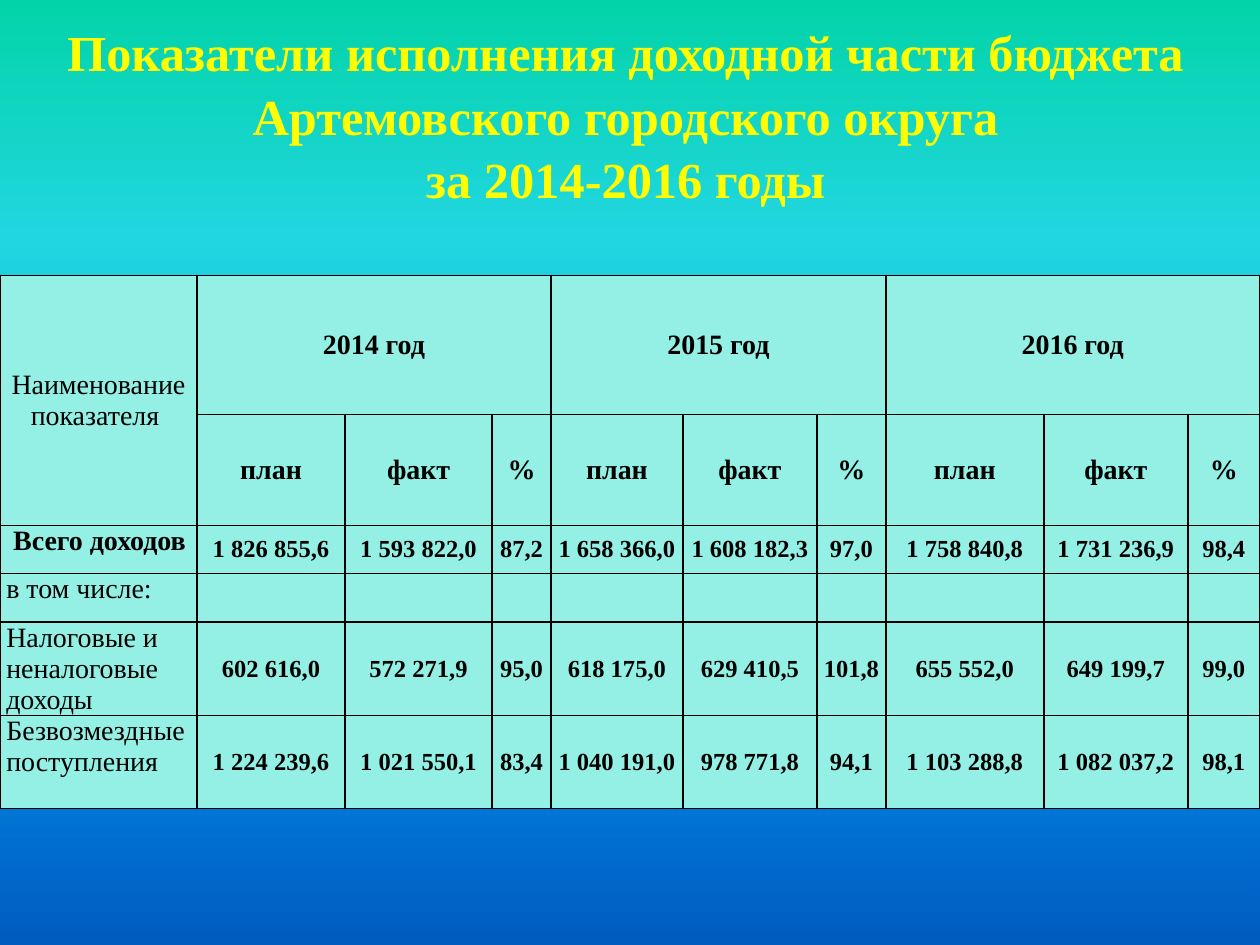
from lxml.etree import SubElement
from pptx import Presentation
from pptx.dml.color import RGBColor
from pptx.enum.text import MSO_ANCHOR, MSO_AUTO_SIZE, PP_ALIGN
from pptx.oxml.ns import qn
from pptx.util import Pt

YELLOW = RGBColor(0xFF, 0xFF, 0x00)
BLACK = RGBColor(0x00, 0x00, 0x00)
MINT = RGBColor(0x94, 0xF0, 0xE4)
BACKGROUND = [(0, RGBColor(0x03, 0xD4, 0xA8)), (25, RGBColor(0x21, 0xD6, 0xE0)),
              (75, RGBColor(0x00, 0x87, 0xE6)), (100, RGBColor(0x00, 0x5C, 0xBF))]
FONT = "Times New Roman"


def format_font(font, color, **values):
    for name, value in {"name": FONT, **values}.items():
        setattr(font, name, value)
    font.color.rgb = color


def add_borders(cell):
    tcPr = cell._tc.get_or_add_tcPr()
    for i, side in enumerate(("a:lnL", "a:lnR", "a:lnT", "a:lnB")):
        ln = SubElement(tcPr, qn(side), w=str(Pt(1)))
        fill = SubElement(ln, qn("a:solidFill"))
        SubElement(fill, qn("a:srgbClr"), val=str(BLACK))
        tcPr.insert(i, ln)  # borders come before the cell fill


prs = Presentation()
prs.slide_width, prs.slide_height = Pt(720), Pt(540)
s = prs.slides.add_slide(prs.slide_layouts[5])

# Background gradient, top to bottom
fill = s.background.fill
fill.gradient()
fill.gradient_angle = 270
stops = fill._fill._gradFill.find(qn("a:gsLst"))
for stop in list(stops):
    stops.remove(stop)
for position, color in BACKGROUND:
    stop = SubElement(stops, qn("a:gs"), pos=str(position * 1000))
    SubElement(stop, qn("a:srgbClr"), val=str(color))

# Title
title = s.shapes.title
title.left, title.top, title.width, title.height = Pt(11.5), Pt(16.5), Pt(692), Pt(106.5)
tf = title.text_frame
tf.auto_size = MSO_AUTO_SIZE.NONE
tf.word_wrap = True
tf.vertical_anchor = MSO_ANCHOR.BOTTOM
p = tf.paragraphs[0]
p.alignment = PP_ALIGN.CENTER
p.line_spacing = 1.05
for i, line in enumerate(("Показатели исполнения доходной части бюджета Артемовского городского округа",
                          "за 2014-2016 годы")):
    if i:
        p.add_line_break()
    r = p.add_run()
    r.text = line
    format_font(r.font, YELLOW, size=Pt(28.8), bold=True)

# Table contents
ROWS = [
    ["Наименование показателя ", "2014 год", "", "", "2015 год", "", "", "2016 год", "", ""],
    [""] + ["план", "факт", "%"] * 3,
    [" Всего доходов", "1 826 855,6", "1 593 822,0", "87,2", "1 658 366,0", "1 608 182,3", "97,0",
     "1 758 840,8", "1 731 236,9", "98,4"],
    ["в том числе:"] + [""] * 9,
    ["Налоговые и неналоговые доходы", "602 616,0", "572 271,9", "95,0", "618 175,0", "629 410,5",
     "101,8", "655 552,0", "649 199,7", "99,0"],
    ["Безвозмездные поступления", "1 224 239,6", "1 021 550,1", "83,4", "1 040 191,0", "978 771,8",
     "94,1", "1 103 288,8", "1 082 037,2", "98,1"],
]
WIDTHS = [112.6, 84.6, 84, 33.7, 75.4, 76.6, 39.4, 90.3, 82.3, 41.1]
HEIGHTS = [79.4, 63.4, 27.6, 27.8, 53.1, 53.1]
HEADER_ROWS, TOTAL_ROW = 2, 2

# Table grid
frame = s.shapes.add_table(len(ROWS), len(WIDTHS), Pt(0), Pt(157.4), Pt(720), Pt(sum(HEIGHTS)))
table = frame.table
table.first_row = table.horz_banding = False
for column, width in zip(table.columns, WIDTHS):
    column.width = Pt(width)
for row, height in zip(table.rows, HEIGHTS):
    row.height = Pt(height)
table.cell(0, 0).merge(table.cell(1, 0))
for first in (1, 4, 7):
    table.cell(0, first).merge(table.cell(0, first + 2))

# Table cells
for i, texts in enumerate(ROWS):
    for j, text in enumerate(texts):
        cell = table.cell(i, j)
        header, label = i < HEADER_ROWS, j == 0
        row_label = label and not header
        for name, value in {"margin_left": Pt(3.6), "margin_right": Pt(3.6),
                            "margin_top": 0, "margin_bottom": 0}.items():
            setattr(cell, name, value)
        cell.vertical_anchor = MSO_ANCHOR.TOP if row_label else MSO_ANCHOR.MIDDLE
        cell.fill.solid()
        cell.fill.fore_color.rgb = MINT
        add_borders(cell)
        p = cell.text_frame.paragraphs[0]
        p.alignment = PP_ALIGN.LEFT if row_label else PP_ALIGN.CENTER
        if text:
            r = p.add_run()
            r.text = text
            format_font(r.font, BLACK, size=Pt(16 if header or label else 14),
                        bold=not label or i == TOTAL_ROW)

prs.save("out.pptx")
